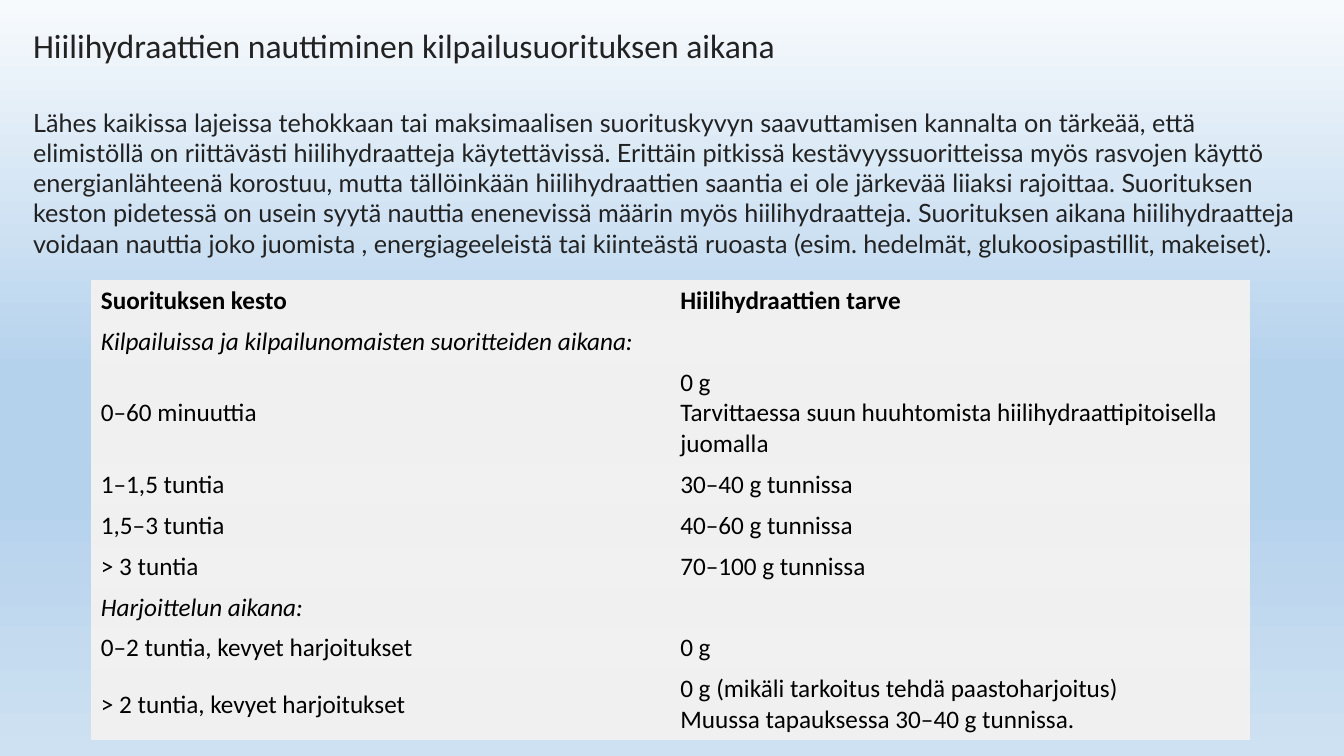
from lxml.etree import SubElement
from pptx import Presentation
from pptx.dml.color import RGBColor
from pptx.enum.text import MSO_ANCHOR, MSO_AUTO_SIZE, PP_ALIGN
from pptx.oxml.ns import qn
from pptx.util import Cm, Pt

NO_STYLE_NO_GRID = "{2D5ABB26-0587-4C30-8999-92F81FD0307C}"


def rgb(value):
    return RGBColor.from_string(value)


def write(tf, text, size=18, font="Calibri", color="000000", bold=False, italic=False):
    """Fill the first paragraph; a newline becomes a line break."""
    tf.word_wrap = True
    p = tf.paragraphs[0]
    p.alignment = PP_ALIGN.LEFT
    p.space_before = Pt(0)
    for i, line in enumerate(text.split("\n")):
        if i:
            p.add_line_break()
        r = p.add_run()
        r.text = line
        r.font.size, r.font.name = Pt(size), font
        r.font.bold, r.font.italic = bold, italic
        r.font.color.rgb = rgb(color)
    return p


prs = Presentation()
prs.slide_width, prs.slide_height = Cm(33.87), Cm(19.05)
s = prs.slides.add_slide(prs.slide_layouts[1])

# Background gradient, top to bottom
s.background.fill.gradient()
grad = next(s.element.iter(qn("a:gradFill")))
stops = grad.find(qn("a:gsLst"))
for stop in list(stops):
    stops.remove(stop)
for pos, color in [(0, "F7FAFD"), (49, "B5D2EC"), (66, "B5D2EC"), (100, "CEE1F2")]:
    stop = SubElement(stops, qn("a:gs"), pos=str(pos * 1000))
    SubElement(stop, qn("a:srgbClr"), val=color)
grad.find(qn("a:lin")).set("ang", "5400000")

# Title and introduction
title, body = s.shapes.title, s.placeholders[1]
for sp, top, height in [(title, 0.51, 1.3), (body, 2.57, 4.09)]:
    sp.left, sp.top, sp.width, sp.height = Cm(0.58), Cm(top), Cm(32.64), Cm(height)
    sp.text_frame.auto_size = MSO_AUTO_SIZE.NONE
    sp.text_frame.vertical_anchor = MSO_ANCHOR.TOP
write(title.text_frame, "Hiilihydraattien nauttiminen kilpailusuorituksen aikana",
      size=24, color="222222")
p = write(
    body.text_frame,
    "Lähes kaikissa lajeissa tehokkaan tai maksimaalisen suorituskyvyn saavuttamisen "
    "kannalta on tärkeää, että elimistöllä on riittävästi hiilihydraatteja "
    "käytettävissä. Erittäin pitkissä kestävyyssuoritteissa myös rasvojen käyttö "
    "energianlähteenä korostuu, mutta tällöinkään hiilihydraattien saantia ei ole "
    "järkevää liiaksi rajoittaa. Suorituksen keston pidetessä on usein syytä nauttia "
    "enenevissä määrin myös hiilihydraatteja. Suorituksen aikana hiilihydraatteja "
    "voidaan nauttia joko juomista , energiageeleistä tai kiinteästä ruoasta (esim. "
    "hedelmät, glukoosipastillit, makeiset).",
    font="Lato", color="222222")
pPr = p._p.get_or_add_pPr()
pPr.set("marL", "0")
pPr.set("indent", "0")
SubElement(pPr, qn("a:buNone"))

# Carbohydrate needs: duration, need, row height in cm
rows = [
    ("Suorituksen kesto", "Hiilihydraattien tarve", 1.02),
    ("Kilpailuissa ja kilpailunomaisten suoritteiden aikana:", "", 1.02),
    ("0–60 minuuttia",
     "0 g\nTarvittaessa suun huuhtomista hiilihydraattipitoisella juomalla", 2.55),
    ("1–1,5 tuntia", "30–40 g tunnissa", 1.02),
    ("1,5–3 tuntia", "40–60 g tunnissa", 1.02),
    ("> 3 tuntia", "70–100 g tunnissa", 1.02),
    ("Harjoittelun aikana:", "", 1.02),
    ("0–2 tuntia, kevyet harjoitukset", "0 g", 1.02),
    ("> 2 tuntia, kevyet harjoitukset",
     "0 g (mikäli tarkoitus tehdä paastoharjoitus)\n"
     "Muussa tapauksessa 30–40 g tunnissa.", 1.78),
]
table = s.shapes.add_table(len(rows), 2, Cm(2.29), Cm(7.06), Cm(29.2), Cm(11.43)).table
table.first_row = table.horz_banding = False
table._tbl.tblPr.find(qn("a:tableStyleId")).text = NO_STYLE_NO_GRID
for i, (duration, need, height) in enumerate(rows):
    table.rows[i].height = Cm(height)
    for j, text in enumerate((duration, need)):
        cell = table.cell(i, j)
        cell.fill.solid()
        cell.fill.fore_color.rgb = rgb("F1F1F1" if i % 2 else "F0F0F0")
        cell.vertical_anchor = MSO_ANCHOR.MIDDLE
        if text:
            write(cell.text_frame, text, bold=i == 0, italic=not need)

prs.save("out.pptx")
